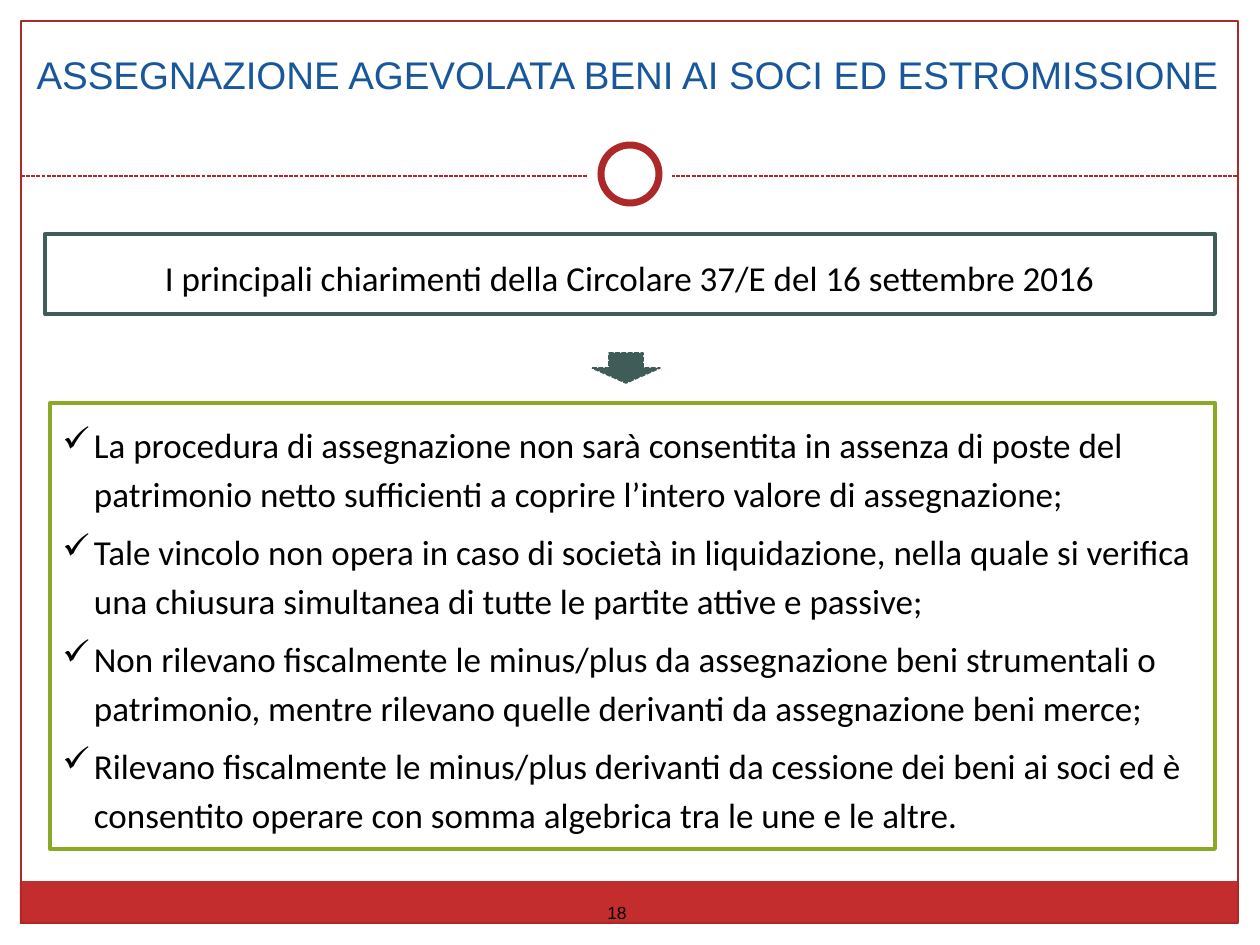
from pptx import Presentation
from pptx import util as u
from pptx.dml.color import RGBColor
from pptx.enum import dml, shapes, text
from pptx.oxml.ns import qn
from lxml import etree

PX_PER_INCH = 126
WHITE = RGBColor(0xFF, 0xFF, 0xFF)
BLACK = RGBColor(0x00, 0x00, 0x00)
BAND_RED = RGBColor(0xC3, 0x2D, 0x2E)
LINE_RED = RGBColor(0xAC, 0x28, 0x29)
TEAL = RGBColor(0x40, 0x5C, 0x58)
GREEN = RGBColor(0x89, 0xA9, 0x27)
TITLE_BLUE = RGBColor(0x18, 0x57, 0x9B)

TITLE = "ASSEGNAZIONE AGEVOLATA BENI AI SOCI ED ESTROMISSIONE"
CIRCULAR = "I principali chiarimenti della Circolare 37/E del 16 settembre 2016"
CLARIFICATIONS = [
    "La procedura di assegnazione non sarà consentita in assenza di poste del "
    "patrimonio netto sufficienti a coprire l’intero valore di assegnazione;",
    "Tale vincolo non opera in caso di società in liquidazione, nella quale si verifica "
    "una chiusura simultanea di tutte le partite attive e passive;",
    "Non rilevano fiscalmente le minus/plus da assegnazione beni strumentali o "
    "patrimonio, mentre rilevano quelle derivanti da assegnazione beni merce;",
    "Rilevano fiscalmente le minus/plus derivanti da cessione dei beni ai soci ed è "
    "consentito operare con somma algebrica tra le une e le altre.",
]


def px(*lengths):
    return [u.Emu(round(n * 914400 / PX_PER_INCH)) for n in lengths]


class SlideBuilder:
    def __init__(self, slide):
        self.slide = slide

    def style_line(self, line, color, width, dashed=False):
        line.color.rgb = color
        line.width = u.Pt(width)
        if dashed:
            line.dash_style = dml.MSO_LINE.SQUARE_DOT

    def shape(self, kind, box, fill=None, line=None, width=0.75, dashed=False):
        shape = self.slide.shapes.add_shape(kind, *px(*box))
        shape.shadow.inherit = False
        if fill is None:
            shape.fill.background()
        else:
            shape.fill.solid()
            shape.fill.fore_color.rgb = fill
        if line is None:
            shape.line.fill.background()
        else:
            self.style_line(shape.line, line, width, dashed)
        return shape

    def rule(self, ends, color, width):
        rule = self.slide.shapes.add_connector(shapes.MSO_CONNECTOR.STRAIGHT, *px(*ends))
        self.style_line(rule.line, color, width, dashed=True)
        etree.SubElement(rule._element.spPr, qn("a:effectLst"))

    def set_text(self, shape, lines, size, font="Calibri", color=BLACK, before=0,
                 leading=None, bullet=None, anchor=text.MSO_ANCHOR.MIDDLE):
        frame = shape.text_frame
        frame.word_wrap = True
        frame.auto_size = text.MSO_AUTO_SIZE.NONE
        frame.vertical_anchor = anchor
        frame.text = "\n".join(lines)
        for paragraph in frame.paragraphs:
            paragraph.font.size = u.Pt(size)
            paragraph.font.name = font
            paragraph.font.color.rgb = color
            paragraph.space_before = u.Pt(before)
            paragraph.alignment = text.PP_ALIGN.LEFT if bullet else text.PP_ALIGN.CENTER
            if leading:
                paragraph.line_spacing = u.Pt(leading)
            if bullet:
                self.add_bullet(paragraph, bullet)

    def add_bullet(self, paragraph, char):
        indent = u.Inches(0.25)
        properties = paragraph._p.get_or_add_pPr()
        properties.set("marL", str(indent))
        properties.set("indent", str(-indent))
        mark = etree.Element(qn("a:buChar"), char=char)
        properties.find(qn("a:defRPr")).addprevious(mark)

    def title(self, box, wording, size, font, color, before):
        title = self.slide.shapes.title
        title.left, title.top, title.width, title.height = px(*box)
        self.set_text(title, [wording], size, font, color, before,
                      anchor=text.MSO_ANCHOR.TOP)

    def label(self, box, wording, size, font):
        label = self.slide.shapes.add_textbox(*px(*box))
        self.set_text(label, [wording], size, font)


def main():
    prs = Presentation()
    prs.slide_width, prs.slide_height = px(1260, 945)
    page = SlideBuilder(prs.slides.add_slide(prs.slide_layouts[5]))
    kind = shapes.MSO_SHAPE

    # Frame, bottom band and dashed rule broken by a ring
    page.shape(kind.RECTANGLE, (20, 881, 1218, 43), fill=BAND_RED)
    page.shape(kind.RECTANGLE, (21, 21, 1217, 902), line=LINE_RED)
    page.rule((21, 176, 1238, 176), LINE_RED, 0.75)
    page.shape(kind.OVAL, (588, 132, 84, 84), fill=WHITE)
    page.shape(kind.OVAL, (601, 145, 58, 58), fill=WHITE, line=LINE_RED, width=4)

    # Title
    page.title((15, 45, 1225, 69), TITLE, 22, "Arial", TITLE_BLUE, before=4.4)

    # Circular, leading down to its clarifications
    circular = page.shape(kind.RECTANGLE, (45, 234, 1170, 80), line=TEAL, width=2.25)
    page.set_text(circular, [CIRCULAR], 20, before=4, leading=28)
    clarifications = page.shape(kind.RECTANGLE, (50, 403, 1165, 446), line=GREEN, width=2.25)
    page.set_text(clarifications, CLARIFICATIONS, 20, before=5, leading=28, bullet="✓")
    page.shape(kind.DOWN_ARROW, (592, 353, 68, 30), fill=TEAL, line=TEAL, width=0.9, dashed=True)

    # Page number
    page.label((591, 896, 52, 33), "18", 10, "Arial")

    prs.save("out.pptx")


if __name__ == "__main__":
    main()
